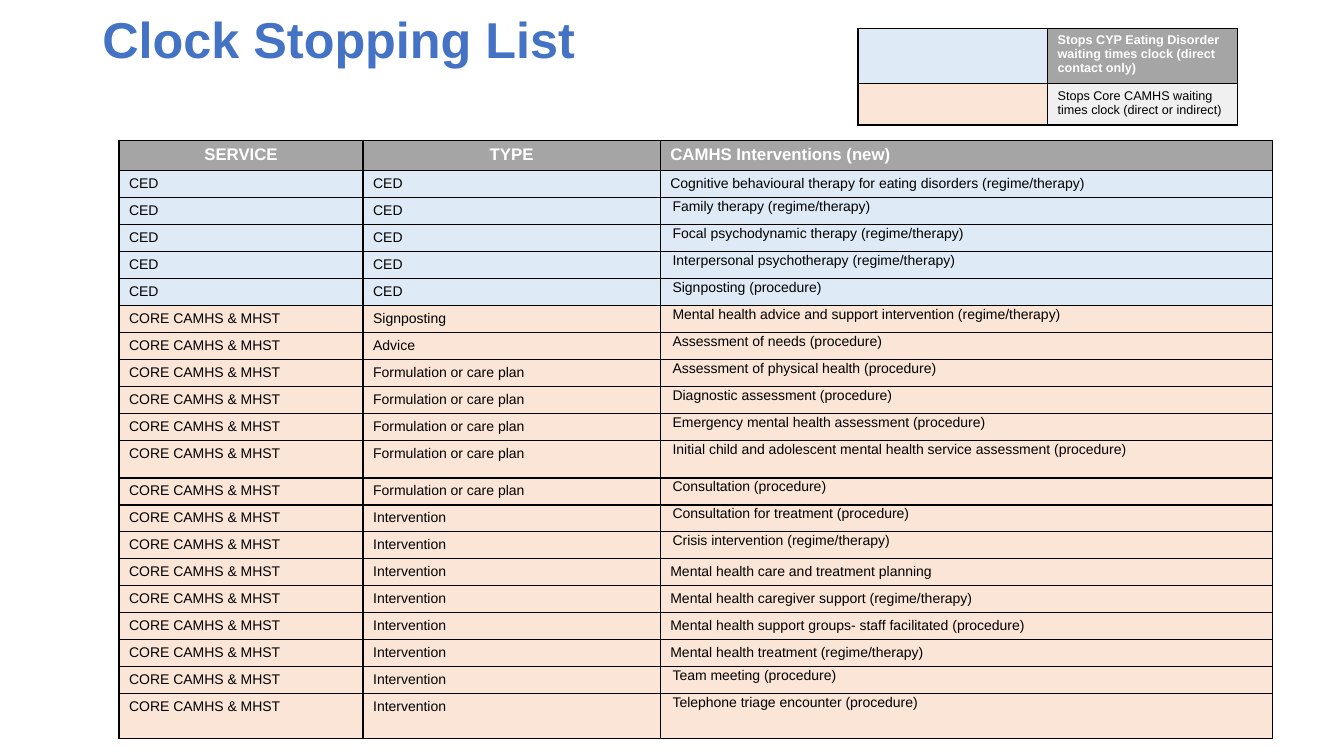
import dataclasses

import pptx
import pptx.dml.color
import pptx.enum.text
import pptx.oxml
import pptx.oxml.ns
import pptx.util

Cm = pptx.util.Cm
Align = pptx.enum.text.PP_ALIGN


@dataclasses.dataclass(frozen=True)
class Theme:
    font: str = "Arial"
    title: str = "4472C4"
    header: str = "A5A5A5"
    eating: str = "DEEBF7"
    core: str = "FBE5D6"
    pale: str = "F0F0F0"
    black: str = "000000"
    white: str = "FFFFFF"
    title_size: int = 36
    header_size: int = 12
    body_size: int = 10
    legend_size: int = 9


theme = Theme()


def write(frame, text, size=theme.body_size, color=theme.black, bold=False, align=Align.LEFT, spacing=None):
    para = frame.paragraphs[0]
    para.alignment = align
    para.line_spacing = spacing
    span = para.add_run()
    span.text = text
    span.font.name = theme.font
    span.font.size = pptx.util.Pt(size)
    span.font.bold = bold
    span.font.color.rgb = pptx.dml.color.RGBColor.from_string(color)


def paint_cell(cell, color):
    """Give the cell a solid fill and a thin black border on every side."""
    properties = cell._tc.get_or_add_tcPr()
    for side in ("lnL", "lnR", "lnT", "lnB"):
        properties.append(pptx.oxml.parse_xml(
            f'<a:{side} {pptx.oxml.ns.nsdecls("a")} w="12700"><a:solidFill>'
            f'<a:srgbClr val="{theme.black}"/></a:solidFill></a:{side}>'))
    cell.fill.solid()
    cell.fill.fore_color.rgb = pptx.dml.color.RGBColor.from_string(color)


deck = pptx.Presentation()
deck.slide_width, deck.slide_height = Cm(33.87), Cm(19.05)
page = deck.slides.add_slide(deck.slide_layouts[6])

# Title
title = page.shapes.add_textbox(Cm(2.33), Cm(0.58), Cm(29.21), Cm(0.99)).text_frame
title.word_wrap = True
title.vertical_anchor = pptx.enum.text.MSO_ANCHOR.MIDDLE
write(title, "Clock Stopping List", size=theme.title_size, color=theme.title, bold=True, spacing=0.9)

# Interventions: type, then name and whether the text sits at the top of its cell
headings = [("SERVICE", Align.CENTER), ("TYPE", Align.CENTER), ("CAMHS Interventions (new)", Align.LEFT)]
interventions = [
    ("CED", "Cognitive behavioural therapy for eating disorders (regime/therapy)", False),
    ("CED", "Family therapy (regime/therapy)", True),
    ("CED", "Focal psychodynamic therapy (regime/therapy)", True),
    ("CED", "Interpersonal psychotherapy (regime/therapy)", True),
    ("CED", "Signposting (procedure)", True),
    ("Signposting", "Mental health advice and support intervention (regime/therapy)", True),
    ("Advice", "Assessment of needs (procedure)", True),
    ("Formulation or care plan", "Assessment of physical health (procedure)", True),
    ("Formulation or care plan", "Diagnostic assessment (procedure)", True),
    ("Formulation or care plan", "Emergency mental health assessment (procedure)", True),
    ("Formulation or care plan",
     "Initial child and adolescent mental health service assessment (procedure)", True),
    ("Formulation or care plan", "Consultation (procedure)", True),
    ("Intervention", "Consultation for treatment (procedure)", True),
    ("Intervention", "Crisis intervention (regime/therapy)", True),
    ("Intervention", "Mental health care and treatment planning", False),
    ("Intervention", "Mental health caregiver support (regime/therapy)", False),
    ("Intervention", "Mental health support groups- staff facilitated (procedure)", False),
    ("Intervention", "Mental health treatment (regime/therapy)", False),
    ("Intervention", "Team meeting (procedure)", True),
    ("Intervention", "Telephone triage encounter (procedure)", True),
]
special_heights = {0: 0.73, 11: 0.94, 20: 1.12}

table = page.shapes.add_table(len(interventions) + 1, len(headings),
                              Cm(3), Cm(3.54), Cm(29.06), Cm(15.03)).table
table.horz_banding = False
for column, width in zip(table.columns, (6.15, 7.49, 15.42)):
    column.width = Cm(width)
for index, row in enumerate(table.rows):
    row.height = Cm(special_heights.get(index, 0.68))

for cell, (heading, align) in zip(table.rows[0].cells, headings):
    paint_cell(cell, theme.header)
    write(cell.text_frame, heading, size=theme.header_size, color=theme.white, bold=True, align=align)

for index, (kind, name, raised) in enumerate(interventions, start=1):
    cells = list(table.rows[index].cells)
    service, color = ("CED", theme.eating) if kind == "CED" else ("CORE CAMHS & MHST", theme.core)
    for cell in cells:
        paint_cell(cell, color)
    write(cells[0].text_frame, service)
    write(cells[1].text_frame, kind)
    write(cells[2].text_frame, name, spacing=1.07 if raised else None)
    if raised:
        cells[2].margin_left = cells[2].margin_right = Cm(0.31)
        cells[2].margin_top = cells[2].margin_bottom = 0

# Legend
legend_rows = [
    (1.32, theme.eating, theme.header, theme.white, True,
     "Stops CYP Eating Disorder waiting times clock (direct contact only)"),
    (1.04, theme.core, theme.pale, theme.black, False,
     "Stops Core CAMHS waiting times clock (direct or indirect)"),
]
legend = page.shapes.add_table(2, 2, Cm(21.62), Cm(0.71), Cm(9.56), Cm(2.36)).table
legend.horz_banding = False
for row, (height, swatch, background, color, bold, meaning) in zip(legend.rows, legend_rows):
    row.height = Cm(height)
    paint_cell(row.cells[0], swatch)
    paint_cell(row.cells[1], background)
    write(row.cells[1].text_frame, meaning, size=theme.legend_size, color=color, bold=bold)

deck.save("out.pptx")
